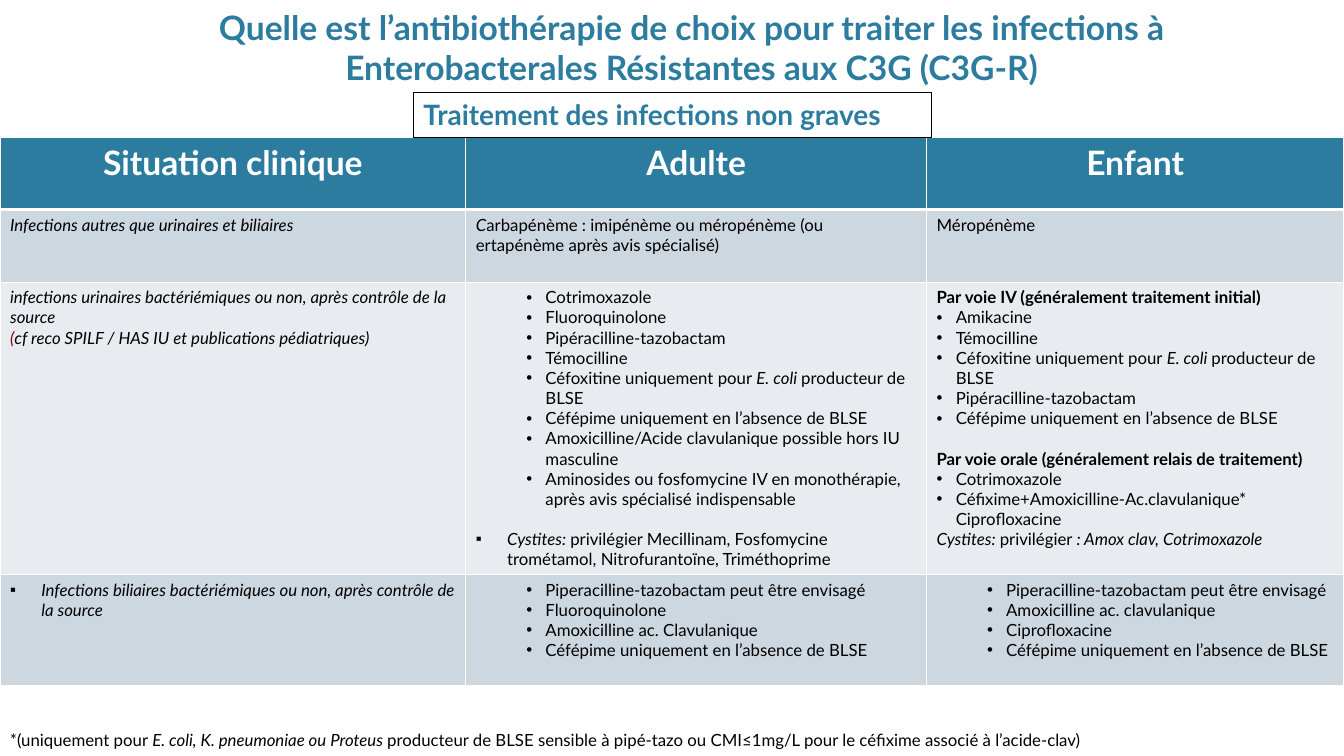
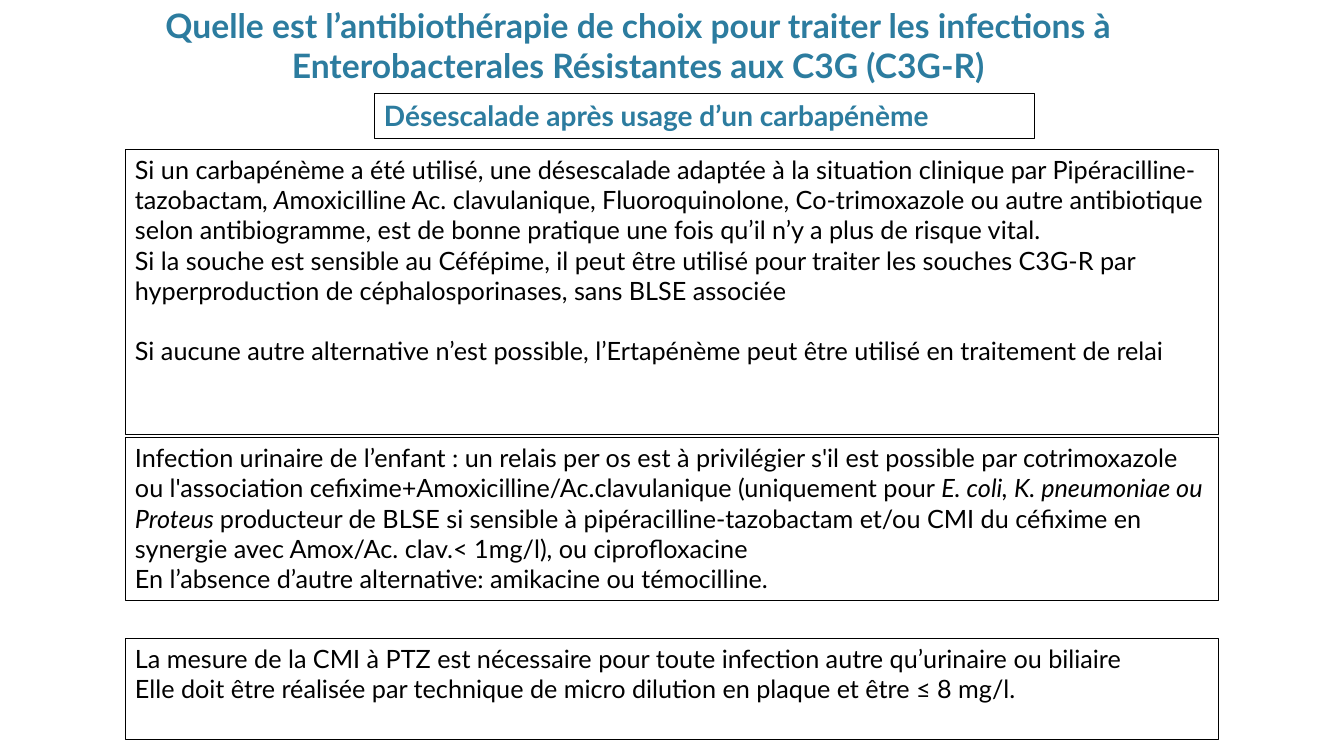
import dataclasses

import lxml.etree
import pptx
import pptx.dml.color
import pptx.enum.shapes
import pptx.enum.text
import pptx.oxml.ns
import pptx.util

Inches = pptx.util.Inches
Pt = pptx.util.Pt
qn = pptx.oxml.ns.qn

# Shared style
FONT = "Lato"
TEAL, WHITE, BLACK, RED = "2C7C9F", "FFFFFF", "000000", "900000"
BAND_DARK, BAND_LIGHT = "CDD7DF", "E8ECF0"
LINE_FACTOR = 1.2
TITLE = ("Quelle est l’antibiothérapie de choix pour traiter les infections à "
         "Enterobacterales Résistantes aux C3G (C3G-R)")


@dataclasses.dataclass
class Run:
    text: str
    bold: bool = False
    italic: bool = False
    color: str = ""


@dataclasses.dataclass
class Para:
    runs: tuple
    bullet: str = ""
    left: float = 0
    hanging: float = 0
    gap: bool = False


def bold(text):
    return Run(text, bold=True)


def italic(text, color=""):
    return Run(text, italic=True, color=color)


def plain(*runs, gap=False):
    return Para(runs, gap=gap)


def dot(*runs):
    return Para(runs, "•", 0.19, 0.19)


def deep_dot(*runs):
    return Para(runs, "•", 0.69, 0.19)


def square(*runs, gap=False):
    return Para(runs, "▪", 0.31, 0.31, gap)


def rgb(color):
    return pptx.dml.color.RGBColor.from_string(color)


# Text
def add_bullet(paragraph, content):
    properties = paragraph._p.get_or_add_pPr()
    properties.set("marL", str(Inches(content.left)))
    properties.set("indent", str(-Inches(content.hanging)))
    lxml.etree.SubElement(properties, qn("a:buFont"), typeface="Arial")
    lxml.etree.SubElement(properties, qn("a:buChar"), char=content.bullet)


def write_text(frame, contents, size, color=BLACK, all_bold=False, centered=False):
    alignments = pptx.enum.text.PP_ALIGN
    for index, content in enumerate(contents):
        paragraph = frame.add_paragraph() if index else frame.paragraphs[0]
        paragraph.alignment = alignments.CENTER if centered else alignments.LEFT
        if content.bullet:
            add_bullet(paragraph, content)
        if content.gap:
            paragraph.space_before = Pt(size * LINE_FACTOR)
        for item in content.runs:
            item = Run(item) if isinstance(item, str) else item
            run = paragraph.add_run()
            run.text = item.text
            run.font.name = FONT
            run.font.size = Pt(size)
            run.font.bold = all_bold or item.bold
            run.font.italic = item.italic
            run.font.color.rgb = rgb(item.color or color)


def add_text(slide, box, contents, size, **style):
    shape = slide.shapes.add_textbox(*map(Inches, box))
    shape.text_frame.word_wrap = True
    write_text(shape.text_frame, contents, size, **style)


def add_title(slide, left, top):
    add_text(slide, (left, top, 10, 0.9), [plain(TITLE)], 24,
             color=TEAL, all_bold=True, centered=True)


# Framed boxes
def add_frame(slide, box, contents, size, **style):
    shape = slide.shapes.add_shape(
        pptx.enum.shapes.MSO_SHAPE.RECTANGLE, *map(Inches, box))
    shape.shadow.inherit = False
    shape.fill.background()
    shape.line.color.rgb = rgb(BLACK)
    shape.line.width = Pt(0.75)
    frame = shape.text_frame
    frame.word_wrap = True
    frame.vertical_anchor = pptx.enum.text.MSO_ANCHOR.TOP
    write_text(frame, contents, size, **style)


def add_caption(slide, left, top, width, text):
    add_frame(slide, (left, top, width, 0.44), [plain(text)], 20,
              color=TEAL, all_bold=True)


# Table
def style_cell(cell, fill, top_width, bottom_width):
    properties = cell._tc.get_or_add_tcPr()
    widths = {"L": 1, "R": 1, "T": top_width, "B": bottom_width}
    for side, width in widths.items():
        line = lxml.etree.SubElement(properties, qn("a:ln" + side), w=str(Pt(width)))
        solid = lxml.etree.SubElement(line, qn("a:solidFill"))
        lxml.etree.SubElement(solid, qn("a:srgbClr"), val=WHITE)
    cell.fill.solid()
    cell.fill.fore_color.rgb = rgb(fill)


def add_grid(slide, left, top, widths, heights, rows):
    shape = slide.shapes.add_table(
        len(rows), len(widths), Inches(left), Inches(top),
        Inches(sum(widths)), Inches(sum(heights)))
    table = shape.table
    for column, width in zip(table.columns, widths):
        column.width = Inches(width)
    for index, (cells, height) in enumerate(zip(rows, heights)):
        table.rows[index].height = Inches(height)
        header = index == 0
        fill = TEAL if header else (BAND_LIGHT, BAND_DARK)[index % 2]
        for position, contents in enumerate(cells):
            cell = table.cell(index, position)
            style_cell(cell, fill, 3 if index == 1 else 1, 3 if header else 1)
            write_text(cell.text_frame, contents, 24 if header else 12,
                       color=WHITE if header else BLACK,
                       all_bold=header, centered=header)


# Wording of the treatment table
CEFOXITIN = ("Céfoxitine uniquement pour ", italic("E. coli "), "producteur de BLSE")
CEFEPIME = "Céfépime uniquement en l’absence de BLSE"
PIPERACILLIN = "Piperacilline-tazobactam peut être envisagé"
SPECIES = italic("E. coli, K. pneumoniae ou Proteus ")

HEADINGS = [[plain(text)] for text in ("Situation clinique", "Adulte", "Enfant")]
OTHER_INFECTIONS = [
    [plain(italic("Infections autres que urinaires et biliaires"))],
    [plain(italic("C"), "arbapénème : imipénème ou méropénème "
                        "(ou ertapénème après avis spécialisé)")],
    [plain("Méropénème")],
]
URINARY_INFECTIONS = [
    [plain(italic("infections urinaires bactériémiques ou non, "
                  "après contrôle de la source")),
     plain(italic("(", RED),
           italic("cf reco SPILF / HAS IU et publications pédiatriques)"))],
    [deep_dot("Cotrimoxazole"),
     deep_dot("Fluoroquinolone"),
     deep_dot("Pipéracilline-tazobactam"),
     deep_dot("Témocilline"),
     deep_dot(*CEFOXITIN),
     deep_dot(CEFEPIME),
     deep_dot("Amoxicilline/Acide clavulanique possible hors IU masculine"),
     deep_dot("Aminosides ou fosfomycine IV en monothérapie, "
              "après avis spécialisé indispensable"),
     square(italic("Cystites: "), "privilégier Mecillinam, Fosfomycine trométamol, "
            "Nitrofurantoïne, Triméthoprime", gap=True)],
    [plain(bold("Par voie IV (généralement traitement initial)")),
     dot("Amikacine"),
     dot("Témocilline"),
     dot(*CEFOXITIN),
     dot("Pipéracilline-tazobactam"),
     dot(CEFEPIME),
     plain(bold("Par voie orale (généralement relais de traitement)"), gap=True),
     dot("Cotrimoxazole"),
     dot("Céfixime+Amoxicilline-Ac.clavulanique* Ciprofloxacine"),
     plain(italic("Cystites: "), "privilégier",
           italic(" : Amox clav, Cotrimoxazole"))],
]
BILIARY_INFECTIONS = [
    [square(italic("Infections biliaires bactériémiques ou non, "
                   "après contrôle de la source"))],
    [deep_dot(text) for text in (PIPERACILLIN, "Fluoroquinolone",
                                 "Amoxicilline ac. Clavulanique", CEFEPIME)],
    [deep_dot(text) for text in (PIPERACILLIN, "Amoxicilline ac. clavulanique",
                                 "Ciprofloxacine", CEFEPIME)],
]

# Wording of the de-escalation boxes: top, height, paragraphs
DEESCALATION = [
    (1.48, 2.83, [
        plain("Si un carbapénème a été utilisé, une désescalade adaptée à la situation "
              "clinique par Pipéracilline-tazobactam", italic(", A"),
              "moxicilline Ac. clavulanique, Fluoroquinolone, Co-trimoxazole ou autre "
              "antibiotique selon antibiogramme, est de bonne pratique une fois qu’il "
              "n’y a plus de risque vital."),
        plain("Si la souche est sensible au Céfépime, il peut être utilisé pour traiter "
              "les souches C3G-R par hyperproduction de céphalosporinases, "
              "sans BLSE associée"),
        plain("Si aucune autre alternative n’est possible, l’Ertapénème peut être "
              "utilisé en traitement de relai", gap=True)]),
    (4.34, 1.62, [
        plain("Infection urinaire de l’enfant : un relais per os est à privilégier s'il "
              "est possible par cotrimoxazole ou l'association "
              "cefixime+Amoxicilline/Ac.clavulanique (uniquement pour ", SPECIES,
              "producteur de BLSE si sensible à pipéracilline-tazobactam et/ou CMI du "
              "céfixime en synergie avec Amox/Ac. clav.< 1mg/l), ou ciprofloxacine"),
        plain("En l’absence d’autre alternative: amikacine ou témocilline.")]),
    (6.33, 1.01, [
        plain("La mesure de la CMI à PTZ est nécessaire pour toute infection autre "
              "qu’urinaire ou biliaire"),
        plain("Elle doit être réalisée par technique de micro dilution en plaque "
              "et être ≤ 8 mg/l.")]),
]


# Slides
def build_treatment(slide):
    add_title(slide, 1.86, 0.02)
    add_grid(slide, 0, 1.36, (4.62, 4.57, 4.14), (0.72, 0.72, 2.89, 1.1),
             (HEADINGS, OTHER_INFECTIONS, URINARY_INFECTIONS, BILIARY_INFECTIONS))
    add_caption(slide, 4.1, 0.92, 5.14, "Traitement des infections non graves")
    footnote = plain("*(uniquement pour ", SPECIES,
                     "producteur de BLSE sensible à pipé-tazo ou CMI≤1mg/L "
                     "pour le céfixime associé à l’acide-clav)")
    add_text(slide, (0, 7.19, 11.88, 0.3), [footnote], 12)


def build_deescalation(slide):
    add_title(slide, 1.33, 0)
    add_caption(slide, 3.71, 0.93, 6.55, "Désescalade après usage d’un carbapénème")
    for top, height, contents in DEESCALATION:
        add_frame(slide, (1.24, top, 10.85, height), contents, 18)


def main():
    presentation = pptx.Presentation()
    presentation.slide_width = Inches(13.33)
    presentation.slide_height = Inches(7.5)
    for build in (build_treatment, build_deescalation):
        build(presentation.slides.add_slide(presentation.slide_layouts[6]))
    presentation.save("out.pptx")


if __name__ == "__main__":
    main()
